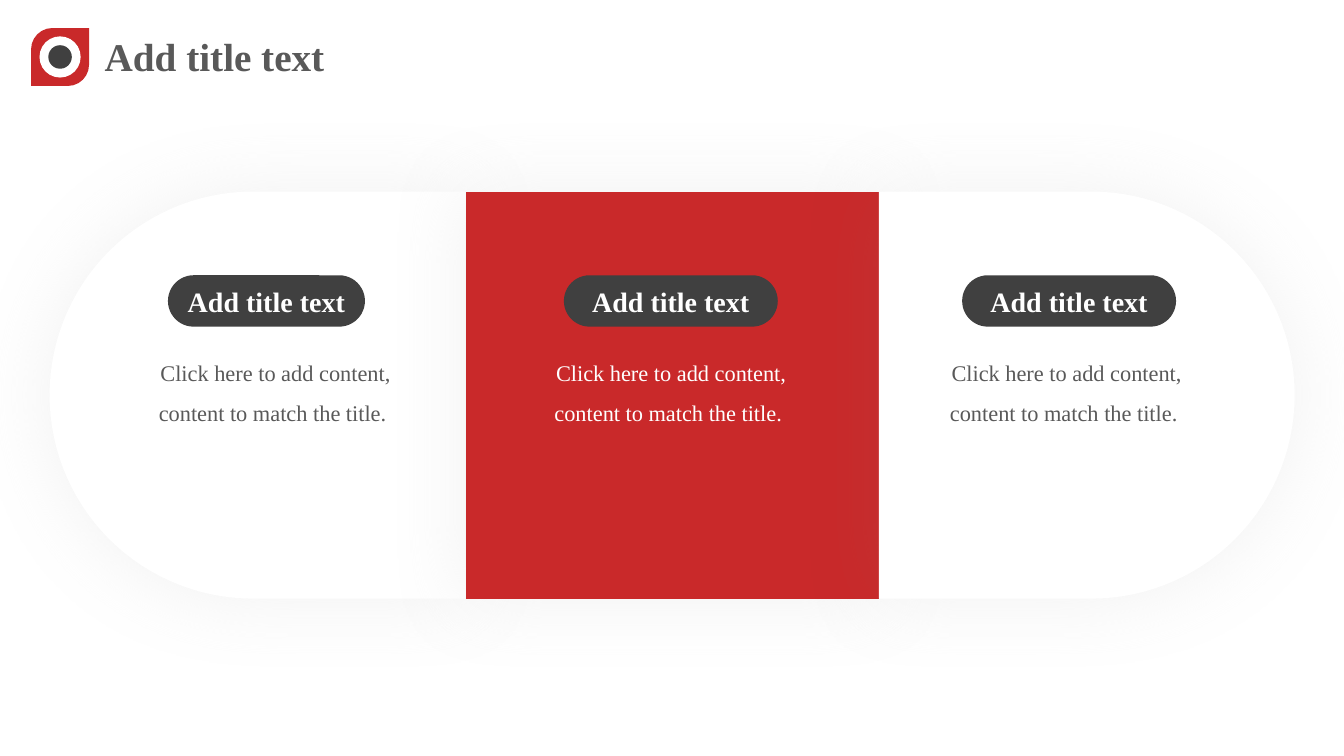
import dataclasses
import math
import typing

import lxml.etree
import pptx
import pptx.dml.color
import pptx.enum.shapes
import pptx.enum.text
import pptx.oxml.ns
import pptx.util

Pt = pptx.util.Pt
Preset = pptx.enum.shapes.MSO_SHAPE
Align = pptx.enum.text.PP_ALIGN
Anchor = pptx.enum.text.MSO_ANCHOR
AutoSize = pptx.enum.text.MSO_AUTO_SIZE
qn = pptx.oxml.ns.qn

RED, DARK, GRAY, WHITE, SHADE = "C9292A", "404040", "595959", "FFFFFF", "808080"
HEADING = "Add title text"
CONTENT = "Click here to add content, content to match the title. "

TITLE_FONT = {"name": "Times New Roman", "size": Pt(28), "bold": True}
PILL_FONT = {"name": "Times New Roman", "size": Pt(20), "bold": True}
BODY_FONT = {"name": "Times New Roman", "size": Pt(16)}
CENTERED = {"alignment": Align.CENTER}
BODY_PARAGRAPH = {"alignment": Align.CENTER, "line_spacing": 1.5}
GROWING = {"word_wrap": True, "auto_size": AutoSize.SHAPE_TO_FIT_TEXT}
TITLE_FRAME = {"word_wrap": False, "auto_size": AutoSize.SHAPE_TO_FIT_TEXT}
PILL_FRAME = {"word_wrap": True, "vertical_anchor": Anchor.MIDDLE}

BAND_TOP, BAND_HEIGHT = 136.8, 290.8
PILL_TOP, PILL_HEIGHT = 196.6, 36.7
BODY_TOP, BODY_WIDTH, BODY_HEIGHT = 243.4, 195.1, 61.9
ARC_STEPS = 60


@dataclasses.dataclass(frozen=True)
class Box:
    left: float
    top: float
    width: float
    height: float

    def lengths(self) -> list[int]:
        return [Pt(value) for value in dataclasses.astuple(self)]


@dataclasses.dataclass(frozen=True)
class Panel:
    left: float
    right: float
    round_side: int  # -1 left end, 0 square, 1 right end
    fill: str
    text_color: str
    body_left: float
    pill_left: float
    pill_width: float


@dataclasses.dataclass(frozen=True)
class Badge:
    preset: typing.Any
    box: Box
    fill: str


PANELS = [
    Panel(35.4, 332.6, -1, WHITE, GRAY, 99.2, 120, 140.7),
    Panel(332.6, 627.8, 0, RED, WHITE, 381.8, 402.8, 152.8),
    Panel(627.8, 924.8, 1, WHITE, GRAY, 664.3, 687.3, 152.8),
]
BADGES = [
    Badge(Preset.ROUND_2_DIAG_RECTANGLE, Box(22.2, 20, 41.4, 41.4), RED),
    Badge(Preset.OVAL, Box(28.2, 26, 29.4, 29.4), WHITE),
    Badge(Preset.OVAL, Box(34.5, 32.3, 16.8, 16.8), DARK),
]


def rgb(color: str) -> pptx.dml.color.RGBColor:
    return pptx.dml.color.RGBColor.from_string(color)


def apply(target: typing.Any, values: dict) -> None:
    for attribute, value in values.items():
        setattr(target, attribute, value)


def paint(shape: typing.Any, color: str) -> None:
    shape.fill.solid()
    shape.fill.fore_color.rgb = rgb(color)
    shape.line.fill.background()
    shape.shadow.inherit = False


def write(shape: typing.Any, text: str, color: str, font: dict, paragraph: dict, frame: dict) -> None:
    apply(shape.text_frame, frame)
    line = shape.text_frame.paragraphs[0]
    apply(line, paragraph)
    run = line.add_run()
    run.text = text
    apply(run.font, font)
    run.font.color.rgb = rgb(color)


def add_preset(shapes: typing.Any, preset: typing.Any, box: Box, color: str) -> typing.Any:
    shape = shapes.add_shape(preset, *box.lengths())
    paint(shape, color)
    return shape


def add_glow(shape: typing.Any) -> None:
    effects = shape._element.spPr.find(qn("a:effectLst"))
    shadow = lxml.etree.SubElement(effects, qn("a:outerShdw"), blurRad=str(Pt(60)), dist="0", algn="ctr", rotWithShape="0")
    color = lxml.etree.SubElement(shadow, qn("a:srgbClr"), val=SHADE)
    lxml.etree.SubElement(color, qn("a:alpha"), val="10000")


def outline(panel: Panel) -> list[tuple[int, int]]:
    bottom, radius = BAND_TOP + BAND_HEIGHT, BAND_HEIGHT / 2
    if panel.round_side == 0:
        corners = [(panel.left, BAND_TOP), (panel.right, BAND_TOP), (panel.right, bottom), (panel.left, bottom)]
    else:
        outer, inner = (panel.left, panel.right) if panel.round_side < 0 else (panel.right, panel.left)
        center = outer - panel.round_side * radius
        angles = [math.pi * step / ARC_STEPS for step in range(ARC_STEPS + 1)]
        arc = [
            (center + panel.round_side * radius * math.sin(angle), BAND_TOP + radius * (1 - math.cos(angle)))
            for angle in angles
        ]
        corners = [(inner, BAND_TOP), *arc, (inner, bottom)]
    return [(Pt(x), Pt(y)) for x, y in corners]


def add_panel(shapes: typing.Any, panel: Panel) -> None:
    start, *rest = outline(panel)
    builder = shapes.build_freeform(*start)
    builder.add_line_segments(rest, close=True)
    backdrop = builder.convert_to_shape()
    paint(backdrop, panel.fill)
    add_glow(backdrop)


def add_panel_text(shapes: typing.Any, panel: Panel) -> None:
    body = shapes.add_textbox(*Box(panel.body_left, BODY_TOP, BODY_WIDTH, BODY_HEIGHT).lengths())
    write(body, CONTENT, panel.text_color, BODY_FONT, BODY_PARAGRAPH, GROWING)
    pill_box = Box(panel.pill_left, PILL_TOP, panel.pill_width, PILL_HEIGHT)
    pill = add_preset(shapes, Preset.ROUNDED_RECTANGLE, pill_box, DARK)
    pill.adjustments[0] = 0.5
    write(pill, HEADING, WHITE, PILL_FONT, CENTERED, PILL_FRAME)


def main() -> None:
    deck = pptx.Presentation()
    apply(deck, {"slide_width": Pt(960), "slide_height": Pt(540)})
    slide = deck.slides.add_slide(deck.slide_layouts[6])

    # Title with its badge
    header = slide.shapes.add_group_shape().shapes
    title = header.add_textbox(*Box(67.7, 19.4, 173.5, 41).lengths())
    write(title, HEADING, GRAY, TITLE_FONT, {}, TITLE_FRAME)
    leaf, *_ = [add_preset(header, badge.preset, badge.box, badge.fill) for badge in BADGES]
    leaf.adjustments[0] = 0.367

    # Three-part band, backdrops below all text
    band = slide.shapes.add_group_shape().shapes
    for panel in PANELS:
        add_panel(band, panel)
    for panel in PANELS:
        add_panel_text(band, panel)

    deck.save("out.pptx")


if __name__ == "__main__":
    main()
